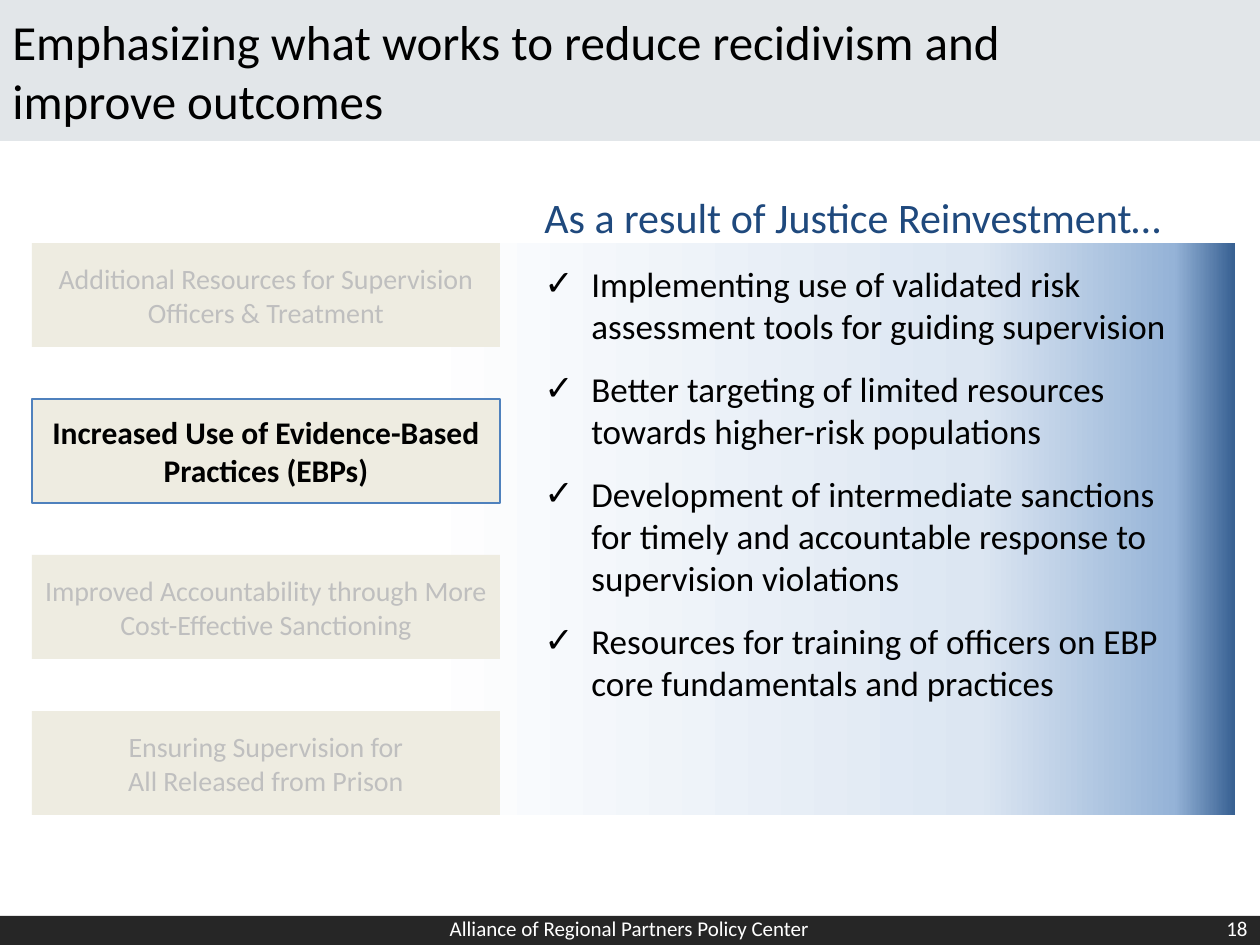
from lxml import etree
from pptx import Presentation
from pptx import util as u
from pptx.dml.color import RGBColor
from pptx.enum import shapes, text
from pptx.oxml.ns import qn

TITLE = "Emphasizing what works to reduce recidivism and\vimprove outcomes"
HEADING = "As a result of Justice Reinvestment…"
FOOTER = "Alliance of Regional Partners Policy Center"
NUMBER = "18"
STRATEGIES = [
    "Additional Resources for Supervision Officers & Treatment",
    "Increased Use of Evidence-Based Practices (EBPs)",
    "Improved Accountability through More Cost-Effective Sanctioning",
    "Ensuring Supervision for\nAll Released from Prison",
]
ACTIVE = 1
RESULTS = [
    "Implementing use of validated risk assessment tools for guiding supervision",
    "Better targeting of limited resources towards higher-risk populations",
    "Development of intermediate sanctions for timely and accountable response to supervision violations",
    "Resources for training of officers on EBP core fundamentals and practices",
]
GRADIENT = [(0, "376092"), (5, "95B3D7"), (21, "DCE6F2"), (67, "FFFFFF")]
LEFT, CENTER, RIGHT = text.PP_ALIGN.LEFT, text.PP_ALIGN.CENTER, text.PP_ALIGN.RIGHT
TOP, MIDDLE = text.MSO_ANCHOR.TOP, text.MSO_ANCHOR.MIDDLE


def px(n):
    return u.Emu(round(n * 914400 / 126))


def rgb(color):
    return RGBColor.from_string(color)


def write(sp, words, size, color, align=LEFT, anchor=MIDDLE, bold=False):
    tf = sp.text_frame
    tf.word_wrap = True
    tf.vertical_anchor = anchor
    tf.text = words
    for p in tf.paragraphs:
        p.alignment = align
        for r in p.runs:
            r.font.size = u.Pt(size)
            r.font.name = "Calibri"
            r.font.bold = bold
            r.font.color.rgb = rgb(color)
    return tf


def add_rect(s, box, fill, line=None):
    sp = s.shapes.add_shape(shapes.MSO_SHAPE.RECTANGLE, *map(px, box))
    sp.shadow.inherit = False
    sp.fill.solid()
    sp.fill.fore_color.rgb = rgb(fill)
    if line:
        sp.line.color.rgb = rgb(line)
        sp.line.width = u.Pt(1)
    else:
        sp.line.fill.background()
    return sp


def add_text(s, box, *args, **style):
    return write(s.shapes.add_textbox(*map(px, box)), *args, **style)


def set_gradient(sp, stops, angle):
    sp.fill.gradient()
    sp.fill.gradient_angle = angle
    stop_list = sp.fill._xPr.find(".//" + qn("a:gsLst"))
    for old in list(stop_list):
        stop_list.remove(old)
    for pos, color in stops:
        gs = etree.SubElement(stop_list, qn("a:gs"), pos=str(pos * 1000))
        etree.SubElement(gs, qn("a:srgbClr"), val=color)


def set_check(p, indent):
    p.space_before = u.Pt(12)
    pPr = p._p.get_or_add_pPr()
    pPr.set("marL", str(px(indent)))
    pPr.set("indent", str(-px(indent)))
    etree.SubElement(pPr, qn("a:buFont"), typeface="Calibri")
    etree.SubElement(pPr, qn("a:buChar"), char="✓")


def main():
    """Build the slide on evidence-based practices and save it."""
    prs = Presentation()
    prs.slide_width, prs.slide_height = px(1260), px(945)
    s = prs.slides.add_slide(prs.slide_layouts[6])

    add_rect(s, (0, 916, 1260, 29), "262626")
    set_gradient(add_rect(s, (16, 243, 1219, 572), "FFFFFF"), GRADIENT, 180)
    write(add_rect(s, (0, 0, 1260, 141), "E2E6E9"), TITLE, 28, "000000")
    add_text(s, (966, 903, 294, 50), NUMBER, 12, "FFFFFF", RIGHT)
    add_text(s, (405, 902, 449, 53), FOOTER, 12, "FFFFFF", CENTER)

    for i, words in enumerate(STRATEGIES):
        active = i == ACTIVE
        sp = add_rect(s, (32, 243 + 156 * i, 468, 104), "EEECE1", "4F81BD" if active else None)
        size, color = (18, "000000") if active else (16, "BFBFBF")
        write(sp, words, size, color, CENTER, bold=active)

    tf = add_text(s, (532, 256, 668, 459), "\n".join(RESULTS), 20, "000000", anchor=TOP)
    for p in tf.paragraphs:
        set_check(p, 47)
    add_text(s, (532, 185, 703, 63), HEADING, 24, "1F497D", anchor=TOP)

    prs.save("out.pptx")


if __name__ == "__main__":
    main()
